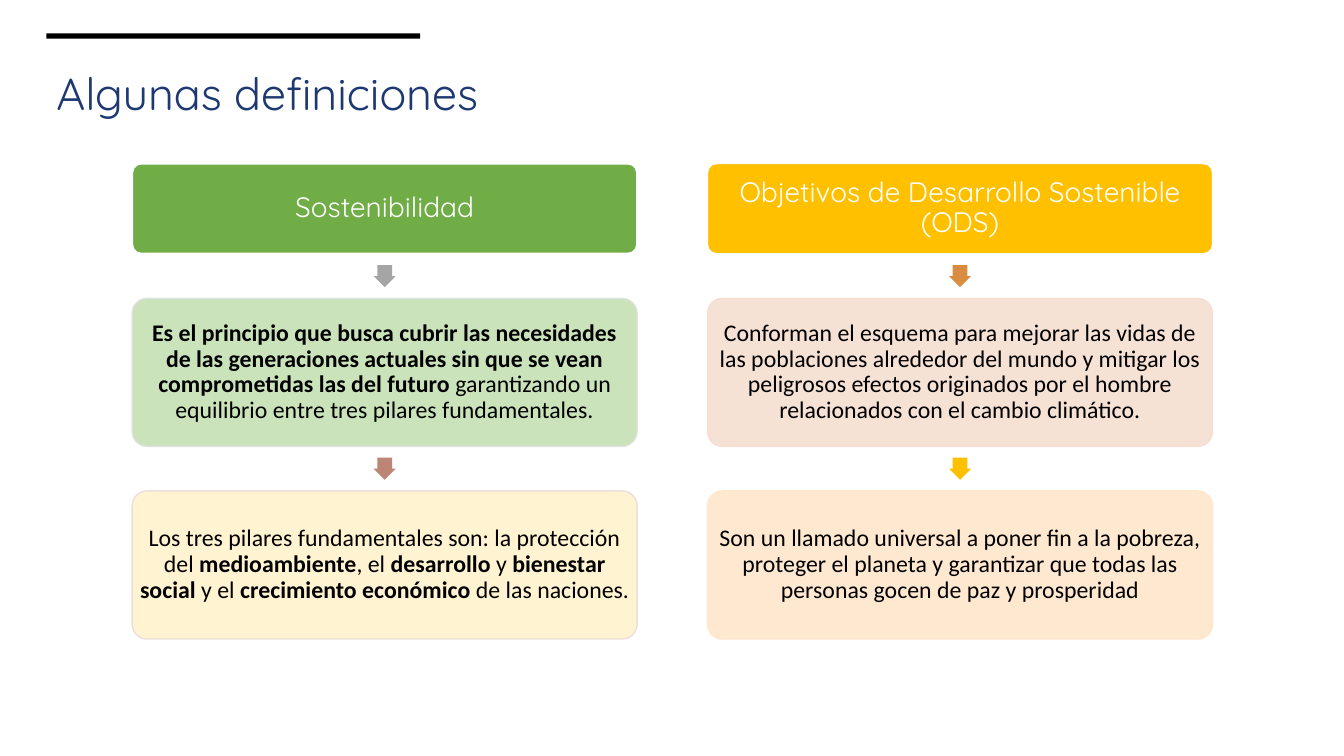
import pptx
import pptx.dml.color
import pptx.enum.shapes
import pptx.enum.text
import pptx.util
from lxml import etree

Pt = pptx.util.Pt
RGBColor = pptx.dml.color.RGBColor
Shape = pptx.enum.shapes.MSO_SHAPE
Align = pptx.enum.text.PP_ALIGN

BLACK = RGBColor(0x00, 0x00, 0x00)
WHITE = RGBColor(0xFF, 0xFF, 0xFF)
NAVY = RGBColor(0x1E, 0x39, 0x72)
GREEN = RGBColor(0x70, 0xAD, 0x47)
LIGHT_GREEN = RGBColor(0xC5, 0xE0, 0xB4)
GREY = RGBColor(0xA5, 0xA5, 0xA5)
LIGHT_GREY = RGBColor(0xE1, 0xE1, 0xE1)
BROWN = RGBColor(0xBB, 0x86, 0x76)
CREAM = RGBColor(0xFF, 0xF2, 0xCC)
ROSE = RGBColor(0xEC, 0xDD, 0xD9)
GOLD = RGBColor(0xFF, 0xC0, 0x00)
ORANGE = RGBColor(0xD9, 0x8B, 0x3F)
PINK = RGBColor(0xF6, 0xDE, 0xD1)
PEACH = RGBColor(0xFF, 0xE6, 0xCB)

TITLE = "Algunas definiciones"
COLUMNS = [
    {
        "header": ("Sostenibilidad", GREEN, 1.5),
        "steps": [
            (GREY, LIGHT_GREEN, LIGHT_GREY,
             "**Es el principio que busca cubrir las necesidades de las generaciones "
             "actuales sin que se vean comprometidas las del futuro** garantizando un "
             "equilibrio entre tres pilares fundamentales."),
            (BROWN, CREAM, ROSE,
             "Los tres pilares fundamentales son: la protección del **medioambiente**, "
             "el **desarrollo **y **bienestar social **y el **crecimiento económico **"
             "de las naciones."),
        ],
    },
    {
        "header": ("Objetivos de Desarrollo Sostenible (ODS)", GOLD, 1),
        "steps": [
            (ORANGE, PINK, PINK,
             "Conforman el esquema para mejorar las vidas de las poblaciones alrededor "
             "del mundo y mitigar los peligrosos efectos originados por el hombre "
             "relacionados con el cambio climático."),
            (GOLD, PEACH, PEACH,
             "Son un llamado universal a poner fin a la pobreza, proteger el planeta y "
             "garantizar que todas las personas gocen de paz y prosperidad"),
        ],
    },
]

COLUMN_LEFT, COLUMN_STEP, BOX_WIDTH = 94.4, 411, 360.7
HEADER_TOP, HEADER_HEIGHT, STEP_HEIGHT = 116.8, 64.5, 105.8
ARROW_SIZE, ARROW_GAP = 15.8, 8

presentation = pptx.Presentation()
presentation.slide_width = Pt(960)
presentation.slide_height = Pt(540)
slide = presentation.slides.add_slide(presentation.slide_layouts[6])


def add_shape(kind, left, top, width, height, fill, line=None, line_width=1, opacity=100):
    shape = slide.shapes.add_shape(kind, Pt(left), Pt(top), Pt(width), Pt(height))
    shape.shadow.inherit = False
    shape.fill.solid()
    shape.fill.fore_color.rgb = fill
    if line is None:
        shape.line.fill.background()
    else:
        shape.line.color.rgb = line
        shape.line.width = Pt(line_width)
    if opacity < 100:
        for color in shape._element.spPr.iter(pptx.oxml.ns.qn("a:srgbClr")):
            alpha = etree.SubElement(color, pptx.oxml.ns.qn("a:alpha"))
            alpha.set("val", str(opacity * 1000))
    return shape


def write_text(shape, text, font="Calibri", size=17, color=BLACK, align=Align.CENTER, margin=1.7):
    frame = shape.text_frame
    frame.word_wrap = True
    frame.vertical_anchor = pptx.enum.text.MSO_ANCHOR.MIDDLE
    frame.margin_left = frame.margin_right = Pt(margin)
    frame.margin_top = frame.margin_bottom = Pt(min(margin, 3.6))
    paragraph = frame.paragraphs[0]
    paragraph.alignment = align
    paragraph.line_spacing = 0.9
    for index, part in enumerate(text.split("**")):
        if part:
            run = paragraph.add_run()
            run.text = part
            run.font.name = font
            run.font.size = Pt(size)
            run.font.color.rgb = color
            run.font.bold = index % 2 == 1


def add_box(left, top, height, fill, line, line_width=1, opacity=100):
    box = add_shape(Shape.ROUNDED_RECTANGLE, left, top, BOX_WIDTH, height,
                    fill, line, line_width, opacity)
    box.adjustments[0] = 0.1
    return box


def add_arrow(left, top, fill):
    arrow = add_shape(Shape.RIGHT_ARROW, left, top, ARROW_SIZE, ARROW_SIZE, fill)
    arrow.rotation = 90
    arrow.adjustments[0] = 0.667
    arrow.adjustments[1] = 0.5


add_shape(Shape.RECTANGLE, 33.1, 23.8, 267, 3.8, BLACK)
title = slide.shapes.add_textbox(Pt(33.1), Pt(23.8), Pt(891.4), Pt(89.3))
write_text(title, TITLE, font="Quicksand", size=32, color=NAVY, align=Align.LEFT, margin=7.2)

for column_index, column in enumerate(COLUMNS):
    left = COLUMN_LEFT + column_index * COLUMN_STEP
    heading, fill, line_width = column["header"]
    header = add_box(left, HEADER_TOP, HEADER_HEIGHT, fill, WHITE, line_width)
    write_text(header, heading, font="Quicksand", size=20, color=WHITE, margin=2)
    bottom = HEADER_TOP + HEADER_HEIGHT
    for arrow_fill, fill, line, text in column["steps"]:
        add_arrow(left + (BOX_WIDTH - ARROW_SIZE) / 2, bottom + ARROW_GAP, arrow_fill)
        top = bottom + ARROW_SIZE + 2 * ARROW_GAP
        write_text(add_box(left, top, STEP_HEIGHT, fill, line, opacity=90), text)
        bottom = top + STEP_HEIGHT

presentation.save("out.pptx")
